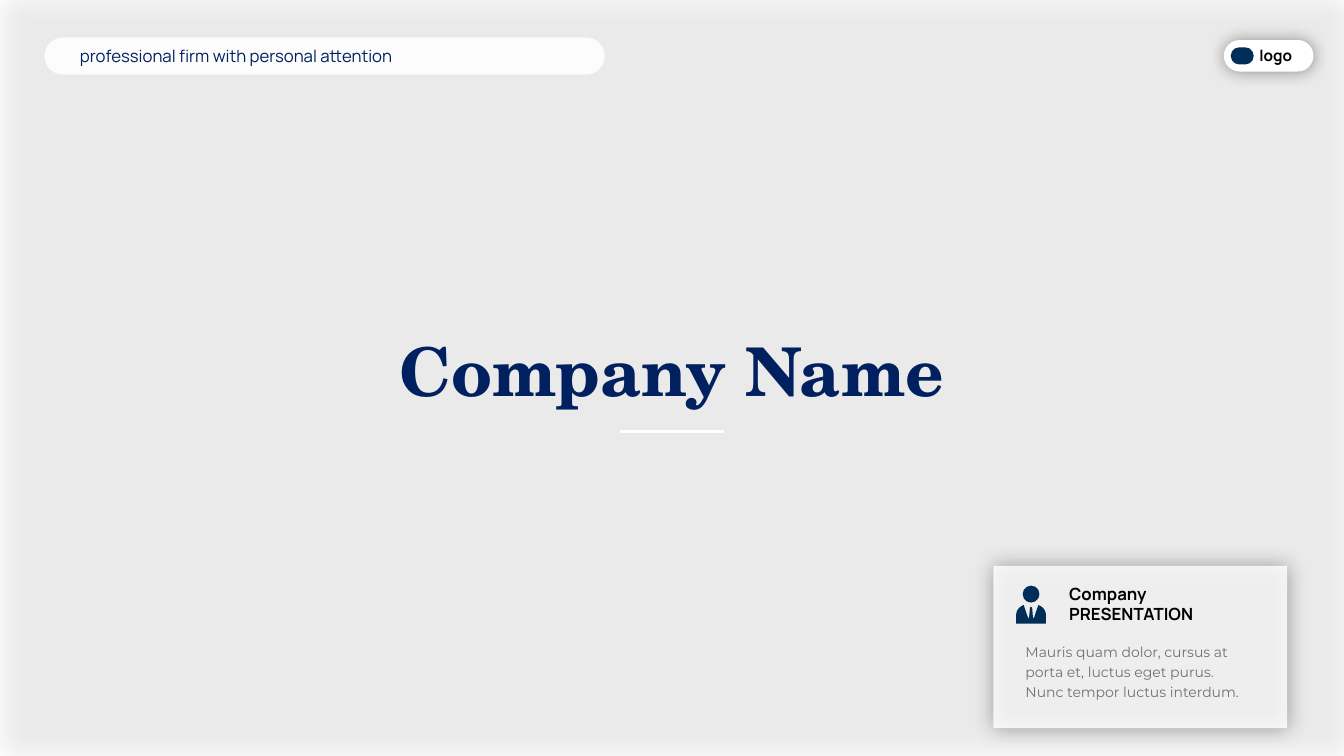
from dataclasses import dataclass
from typing import Any, Optional

from lxml.etree import SubElement
from pptx import Presentation
from pptx.dml.color import RGBColor
from pptx.enum.shapes import MSO_CONNECTOR, MSO_SHAPE
from pptx.enum.text import MSO_AUTO_SIZE, PP_ALIGN
from pptx.oxml.ns import qn
from pptx.util import Pt


@dataclass(frozen=True)
class Theme:
    white: str = "FFFFFF"
    black: str = "000000"
    navy: str = "002060"
    icon: str = "012E59"
    grey: str = "757070"
    heading_font: str = "TeX Gyre Schola"
    label_font: str = "Manrope"
    body_font: str = "Montserrat"
    title_size: float = 48
    label_size: float = 12
    logo_size: float = 11
    body_size: float = 10


THEME = Theme()


@dataclass(frozen=True)
class Area:
    left: float
    top: float
    width: float
    height: float

    def in_points(self) -> tuple:
        return Pt(self.left), Pt(self.top), Pt(self.width), Pt(self.height)


@dataclass(frozen=True)
class Shadow:
    blur: float
    distance: float = 0
    opacity: int = 40


@dataclass(frozen=True)
class Panel:
    area: Area
    color: str = THEME.white
    kind: Any = MSO_SHAPE.RECTANGLE
    opacity: int = 100
    shadow: Optional[Shadow] = None


BACKDROP = Panel(Area(0, 0, 960, 540), opacity=73, shadow=Shadow(17, 3))
LOGO_PILL = Panel(Area(874.2, 28.6, 64, 22.5), kind=MSO_SHAPE.ROUNDED_RECTANGLE,
                  shadow=Shadow(12))
LOGO_MARK = Panel(Area(879.1, 33.8, 16.4, 12.3), THEME.icon, MSO_SHAPE.ROUNDED_RECTANGLE)
CARD = Panel(Area(709.5, 404.2, 210, 116), opacity=83, shadow=Shadow(15))
PERSON_HEAD = Panel(Area(730.5, 418.3, 12, 12.1), THEME.icon, MSO_SHAPE.OVAL)
TAGLINE_PILL = Panel(Area(31.7, 26.8, 400.3, 26.6), kind=MSO_SHAPE.ROUNDED_RECTANGLE,
                     opacity=87)

PERSON_CENTER = 736.5
LAPEL = [(0, 433.3), (0.8, 434.2), (1.4, 441.4), (2.1, 441.4)]
SHOULDER = [(5.2, 432.2), (8.2, 433.1), (10.6, 435.9), (10.6, 439.3)]
HEM = [(10.6, 445.5)]


def add_alpha(color_parent: Any, opacity: int) -> None:
    SubElement(color_parent, qn("a:alpha"), val=str(opacity * 1000))


def paint(shape: Any, color: str, opacity: int = 100) -> None:
    shape.shadow.inherit = False
    shape.fill.solid()
    shape.fill.fore_color.rgb = RGBColor.from_string(color)
    shape.line.fill.background()
    if opacity < 100:
        add_alpha(shape._element.spPr.find(qn("a:solidFill"))[0], opacity)


def cast_shadow(shape: Any, shadow: Shadow) -> None:
    effects = shape._element.spPr.find(qn("a:effectLst"))
    outer = SubElement(effects, qn("a:outerShdw"), blurRad=str(Pt(shadow.blur)),
                       dist=str(Pt(shadow.distance)), dir="0", algn="ctr", rotWithShape="0")
    add_alpha(SubElement(outer, qn("a:srgbClr"), val=THEME.black), shadow.opacity)


def draw_panel(shapes: Any, panel: Panel) -> None:
    shape = shapes.add_shape(panel.kind, *panel.area.in_points())
    if panel.kind == MSO_SHAPE.ROUNDED_RECTANGLE:
        shape.adjustments[0] = 0.5
    paint(shape, panel.color, panel.opacity)
    if panel.shadow:
        cast_shadow(shape, panel.shadow)


def write(shapes: Any, area: Area, text: str, *, size: float, font: str, color: str,
          bold: bool = False, align: Any = PP_ALIGN.LEFT, line_spacing: float = 1.0) -> None:
    frame = shapes.add_textbox(*area.in_points()).text_frame
    frame.word_wrap = True
    frame.auto_size = MSO_AUTO_SIZE.SHAPE_TO_FIT_TEXT
    para = frame.paragraphs[0]
    para.alignment = align
    para.line_spacing = line_spacing
    span = para.add_run()
    span.text = text
    span.font.size = Pt(size)
    span.font.name = font
    span.font.bold = bold
    span.font.color.rgb = RGBColor.from_string(color)


def sample_curve(controls: list, steps: int = 12) -> list:
    """Return points along the cubic Bézier curve with four control points."""
    points = []
    for step in range(steps + 1):
        t = step / steps
        weights = ((1 - t) ** 3, 3 * t * (1 - t) ** 2, 3 * t * t * (1 - t), t ** 3)
        points.append(tuple(sum(w * c[axis] for w, c in zip(weights, controls))
                            for axis in (0, 1)))
    return points


def draw_person(shapes: Any) -> None:
    """Draw the head, then the body as one half and its mirror image."""
    draw_panel(shapes, PERSON_HEAD)
    half = LAPEL + sample_curve(SHOULDER) + HEM
    offsets = half + [(-x, y) for x, y in reversed(half[1:])]
    outline = [((PERSON_CENTER + x) * 100, y * 100) for x, y in offsets]
    builder = shapes.build_freeform(*outline[0], scale=Pt(1) / 100)
    builder.add_line_segments(outline[1:], close=True)
    paint(builder.convert_to_shape(), THEME.icon)


def draw_rule(shapes: Any, left: float, right: float, y: float) -> None:
    rule = shapes.add_connector(MSO_CONNECTOR.STRAIGHT, Pt(left), Pt(y), Pt(right), Pt(y))
    rule.line.color.rgb = RGBColor.from_string(THEME.white)
    rule.line.width = Pt(2.25)
    SubElement(rule._element.spPr, qn("a:effectLst"))


def main() -> None:
    deck = Presentation()
    deck.slide_width, deck.slide_height = Pt(960), Pt(540)
    page = deck.slides.add_slide(deck.slide_layouts[6])
    shapes = page.shapes

    draw_panel(shapes, BACKDROP)

    logo = shapes.add_group_shape().shapes
    draw_panel(logo, LOGO_PILL)
    write(logo, Area(892.4, 29.5, 38.4, 20.6), "logo", size=THEME.logo_size,
          font=THEME.label_font, color=THEME.black, bold=True)
    draw_panel(logo, LOGO_MARK)

    draw_panel(shapes, CARD)
    draw_person(shapes)
    write(shapes, Area(756.6, 413.6, 117.4, 36.4), "Company PRESENTATION",
          size=THEME.label_size, font=THEME.label_font, color=THEME.black, bold=True)
    write(shapes, Area(725.4, 453.6, 177.5, 51),
          "Mauris quam dolor, cursus at porta et, luctus eget purus. "
          "Nunc tempor luctus interdum.",
          size=THEME.body_size, font=THEME.body_font, color=THEME.grey, line_spacing=1.2)

    draw_panel(shapes, TAGLINE_PILL)
    write(shapes, Area(50, 28.9, 363.6, 21.8), "professional firm with personal attention",
          size=THEME.label_size, font=THEME.label_font, color=THEME.navy)

    write(shapes, Area(275, 231.8, 409.7, 65.4), "Company Name", size=THEME.title_size,
          font=THEME.heading_font, color=THEME.navy, bold=True, align=PP_ALIGN.CENTER)
    draw_rule(shapes, 442.9, 517.1, 308.2)

    deck.save("out.pptx")


if __name__ == "__main__":
    main()
